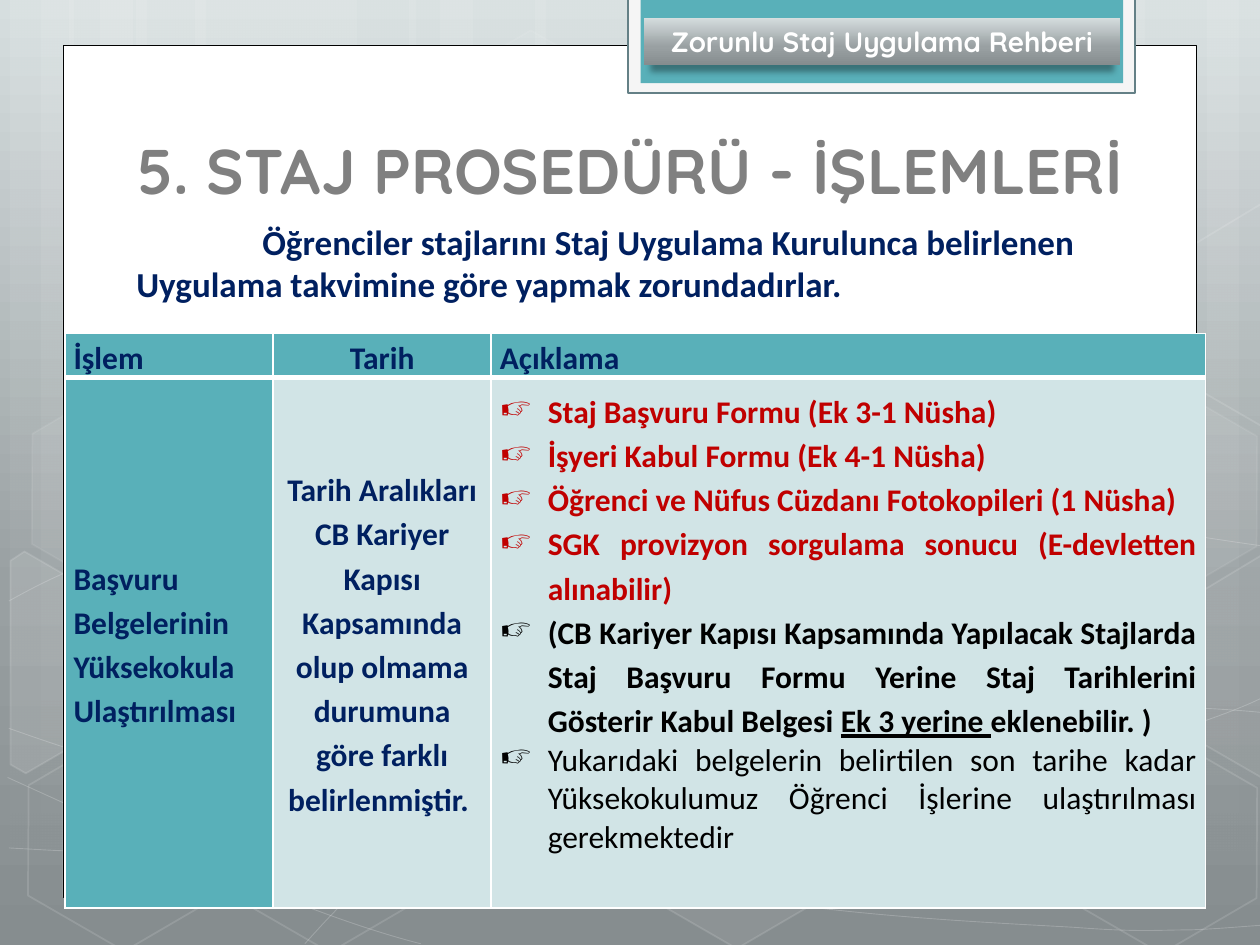
from lxml.etree import SubElement
from pptx import Presentation
from pptx.dml.color import RGBColor
from pptx.enum.shapes import MSO_SHAPE
from pptx.enum.text import MSO_ANCHOR, MSO_AUTO_SIZE, PP_ALIGN
from pptx.oxml.ns import qn
from pptx.util import Inches, Pt

RECTANGLE, HEXAGON = MSO_SHAPE.RECTANGLE, MSO_SHAPE.HEXAGON
LEFT, CENTER, JUSTIFY = PP_ALIGN.LEFT, PP_ALIGN.CENTER, PP_ALIGN.JUSTIFY
TOP, MIDDLE = MSO_ANCHOR.TOP, MSO_ANCHOR.MIDDLE
COLUMNS, ROWS = 100, 75
COLORS = {"white": "FFFFFF", "black": "000000", "gray": "808080", "navy": "002060",
          "red": "C00000", "teal": "59B0B9", "pale": "D1E4E6", "tab": "F5F5F5", "slate": "648086"}
SILVER = [(0, "D6DEDF", 100), (62, "99A0A2", 100), (100, "868D8F", 100)]
FADE = [(0, "FFFFFF", 10), (100, "FFFFFF", 0)]
NAVY = {"name": "Calibri", "size": Pt(18), "bold": True, "color": "navy"}
RED, BLACK = NAVY | {"color": "red"}, NAVY | {"color": "black"}
HEADING = {"name": "Quicksand", "size": Pt(36), "bold": True, "color": "gray"}

STRIPES = [(start + offset, width)
           for start, wide in ((0.8, 17.5), (5.5, 17.5), (32.5, 30.8))
           for offset, width in ((10, wide), (0, 5), (2.5, 8.3))]
STRIPES += [(73.3, 17.5), (95.8, 5), (90, 8.3)]
CURVES = [
    [(0.7, 67.3), (6.1, 67.6), (11.5, 67.9), (19, 67.8), (26.5, 67.7), (35.8, 67.5), (45.8, 66.5),
     (55.8, 65.5), (70, 63.6), (79.2, 61.7), (88.3, 59.8), (97.7, 56.8), (100.7, 55.1)],
    [(0.7, 47.7), (3.6, 46.1), (6.5, 44.6), (12.1, 43.1), (17.8, 41.6), (25.9, 39.4), (34.7, 38.7),
     (43.6, 38), (54.4, 37.9), (65.4, 38.7), (76.4, 39.5), (94.7, 42.6), (100.7, 43.4)],
    [(0.6, 61.7), (12.7, 67.2), (24.7, 72.7), (33.4, 74.9)],
    [(0.7, 57.8), (3.8, 58.9), (7, 60), (12.8, 61.6), (18.6, 63.1), (27.3, 65.6), (35.7, 67.3),
     (44, 69), (54.5, 70.8), (62.8, 71.8), (71.1, 72.9), (80, 73.3), (85.3, 73.6),
     (90.5, 74), (91.9, 73.8), (94.5, 73.8), (97.1, 73.7), (98.9, 73.5), (100.7, 73.4)],
    [(24.2, 74.9), (26, 72.9), (27.8, 70.9), (30.2, 69.1), (32.6, 67.3), (36, 65.3), (38.8, 63.9),
     (41.6, 62.5), (43.3, 61.9), (47, 60.9), (50.6, 59.9), (57.3, 58.5), (60.8, 57.8),
     (64.4, 57.1), (64.9, 57.1), (68, 56.9), (71.1, 56.6), (76, 56.3), (79.4, 56.2),
     (82.9, 56.1), (88.6, 56.2), (95.3, 56.2), (97.1, 56.3), (98.8, 56.4), (100.6, 56.6)],
]
HEXAGONS = [(33.4, 3.6, 4, 8), (49.7, 58.9, 6, 12), (1.1, 59.1, 0, 12), (1.4, 31.2, 7, 8),
            (17.4, 59.2, 0, 12), (75.3, 45.3, 10, 12), (83.4, 59.3, 0, 12), (83.4, 31.4, 7, 8)]
LEFT_EDGE = [(-3.3, 47.1), (-2.7, 45.9), (6.1, 45.9), (10.5, 53.6), (6.2, 61.1), (4.8, 61.1)]
RIGHT_EDGE = [(91.7, 52), (95.9, 44.4), (96.9, 44.4), (105.3, 58.9), (104.8, 59.6), (96, 59.6)]
CUT_HEXAGONS = [(LEFT_EDGE, 10), (RIGHT_EDGE, 4),
                ([(column, row - 27.9) for column, row in RIGHT_EDGE], 0)]
HEADER = [("İşlem", JUSTIFY, TOP), ("Tarih", CENTER, MIDDLE), ("Açıklama", JUSTIFY, TOP)]
PROCESS = "Başvuru Belgelerinin Yüksekokula Ulaştırılması"
DATES = ("Tarih Aralıkları CB Kariyer Kapısı Kapsamında olup olmama durumuna "
         "göre farklı belirlenmiştir. ")
FORMS = ["Staj Başvuru Formu (Ek 3-1 Nüsha)", "İşyeri Kabul Formu (Ek 4-1 Nüsha)",
         "Öğrenci ve Nüfus Cüzdanı Fotokopileri (1 Nüsha)",
         "SGK provizyon sorgulama sonucu (E-devletten alınabilir)"]
CAREER = [("(CB Kariyer Kapısı Kapsamında Yapılacak Stajlarda Staj Başvuru Formu Yerine "
           "Staj Tarihlerini Gösterir Kabul Belgesi ", BLACK),
          ("Ek 3 yerine ", BLACK | {"underline": True}), ("eklenebilir. )", BLACK)]
DELIVERY = ("Yukarıdaki belgelerin belirtilen son tarihe kadar Yüksekokulumuz Öğrenci İşlerine "
            "ulaştırılması gerekmektedir")
INTRO = ("Öğrenciler stajlarını Staj Uygulama Kurulunca belirlenen Uygulama takvimine göre "
         "yapmak zorundadırlar.")


class SlideBuilder:
    """Draws styled elements on one slide, with lengths in grid columns and rows."""

    def __init__(self, deck):
        self.column, self.row = deck.slide_width / COLUMNS, deck.slide_height / ROWS
        self.page = deck.slides.add_slide(deck.slide_layouts[5])
        self.gradient(self.page.background.fill, self.page.element, SILVER)

    def place(self, left, top, width, height):
        return [round(value * unit) for value, unit in
                zip((left, top, width, height), (self.column, self.row) * 2)]

    def color(self, name):
        return RGBColor.from_string(COLORS[name])

    def fade(self, shade, alpha):
        if alpha < 100:
            SubElement(shade, qn("a:alpha"), val=str(alpha * 1000))

    def gradient(self, fill, owner, scale):
        fill.gradient()
        fill.gradient_angle = 270
        stops = next(owner.iter(qn("a:gsLst")))
        stops.clear()
        for position, value, alpha in scale:
            stop = SubElement(stops, qn("a:gs"), pos=str(position * 1000))
            self.fade(SubElement(stop, qn("a:srgbClr"), val=value), alpha)

    def paint(self, shape, fill=None, line=None, width=1, fill_alpha=100, line_alpha=100):
        shape.shadow.inherit = False
        for part, name, alpha, route in ((shape.fill, fill, fill_alpha, "a:solidFill"),
                                         (shape.line.fill, line, line_alpha, "a:ln/a:solidFill")):
            if not name or not alpha:
                part.background()
                continue
            part.solid()
            part.fore_color.rgb = self.color(name)
            steps = [qn(step) for step in (route + "/a:srgbClr").split("/")]
            self.fade(shape.element.spPr.find("/".join(steps)), alpha)
        if line:
            shape.line.width = Pt(width)

    def shape(self, kind, area, **look):
        shape = self.page.shapes.add_shape(kind, *self.place(*area))
        self.paint(shape, **look)
        return shape

    def stripe(self, left, width):
        stripe = self.shape(RECTANGLE, (left, 0, width, ROWS))
        self.gradient(stripe.fill, stripe.element, FADE)

    def hexagon(self, left, top, fill_alpha, line_alpha):
        shape = self.shape(HEXAGON, (left, top, 17.5, 15.2), fill="white", line="white",
                           fill_alpha=fill_alpha, line_alpha=line_alpha)
        shape.adjustments[0], shape.adjustments[1] = 0.285, 1.155
        shape.rotation = 30

    def outline(self, points, close, **look):
        spots = [(column * self.column, row * self.row) for column, row in points]
        builder = self.page.shapes.build_freeform(*spots[0])
        builder.add_line_segments(spots[1:], close=close)
        shape = builder.convert_to_shape()
        self.paint(shape, line="white", **look)
        return shape

    def curve(self, points):
        shape = self.outline(points, False, width=0.5, line_alpha=20)
        route = next(shape.element.iter(qn("a:path")))
        for index, segment in enumerate(route.findall(qn("a:lnTo"))):
            if index % 3 == 0:
                bend = SubElement(route, qn("a:cubicBezTo"))
            bend.append(segment[0])
            route.remove(segment)

    def paragraph(self, para, spans, align=LEFT, indent=None, bullet=None, **spacing):
        para.alignment = align
        for name, value in spacing.items():
            setattr(para, name, value)
        properties = para._p.get_or_add_pPr()
        if indent:
            for name, value in zip(("marL", "indent"), indent):
                properties.set(name, str(Inches(value)))
        if bullet:
            SubElement(properties, qn("a:buChar"), char=bullet)
        for text, style in spans:
            span = para.add_run()
            span.text = text
            for name, value in style.items():
                if name == "color":
                    span.font.color.rgb = self.color(value)
                else:
                    setattr(span.font, name, value)

    def text(self, box, spans, anchor=TOP, **layout):
        frame = box.text_frame
        frame.word_wrap, frame.auto_size = True, MSO_AUTO_SIZE.NONE
        frame.vertical_anchor = anchor
        self.paragraph(frame.paragraphs[0], spans, **layout)

    def title(self, text, area):
        title = self.page.shapes.title
        self.page.shapes.element.append(title.element)
        title.left, title.top, title.width, title.height = self.place(*area)
        self.text(title, [(text, HEADING)], align=CENTER)

    def banner(self, text, area):
        box = self.shape(RECTANGLE, area)
        self.gradient(box.fill, box.element, SILVER)
        effects = box.element.spPr.find(qn("a:effectLst"))
        shadow = SubElement(effects, qn("a:outerShdw"), blurRad=str(Pt(3.5)), dist=str(Pt(4)),
                            dir="5400000", sx="97000", algn="ctr", rotWithShape="0")
        self.fade(SubElement(shadow, qn("a:srgbClr"), val=COLORS["black"]), 34)
        self.text(box, [(text, HEADING | {"size": Pt(16), "color": "white"})], MIDDLE, align=CENTER)

    def table(self, area, widths, heights, rows):
        table = self.page.shapes.add_table(len(rows), len(widths), *self.place(*area)).table
        for column, width in zip(table.columns, widths):
            column.width = round(width * self.column)
        for index, (row, height) in enumerate(zip(table.rows, heights)):
            row.height = round(height * self.row)
            for place, (cell, content) in enumerate(zip(row.cells, rows[index])):
                self.cell(cell, "pale" if index and place else "teal", 1 if index else 3, *content)

    def cell(self, cell, fill, bottom, anchor, margin, paragraphs):
        for side, width in (("L", 1), ("R", 1), ("T", 1), ("B", bottom)):
            border = SubElement(cell._tc.get_or_add_tcPr(), qn("a:ln" + side), w=str(Pt(width)))
            SubElement(SubElement(border, qn("a:solidFill")), qn("a:srgbClr"), val=COLORS["white"])
        cell.fill.solid()
        cell.fill.fore_color.rgb = self.color(fill)
        cell.vertical_anchor = anchor
        cell.margin_left = cell.margin_right = Inches(0.07)
        cell.margin_top = cell.margin_bottom = Inches(margin)
        for index, layout in enumerate(paragraphs):
            frame = cell.text_frame
            self.paragraph(frame.add_paragraph() if index else frame.paragraphs[0], **layout)


def main():
    deck = Presentation()
    deck.slide_width, deck.slide_height = Inches(10), Inches(7.5)
    slide = SlideBuilder(deck)
    for left, width in STRIPES:
        slide.stripe(left, width)
    for points in CURVES:
        slide.curve(points)
    for place in HEXAGONS:
        slide.hexagon(*place)
    for points, alpha in CUT_HEXAGONS:
        slide.outline(points, True, fill="white", fill_alpha=alpha, line_alpha=12).rotation = 30
    slide.shape(RECTANGLE, (5, 3.6, 90, 67.6), fill="white", line="black", width=0.5)
    slide.shape(RECTANGLE, (49.86, -0.2, 40.2, 7.6), fill="tab", line="slate", width=1.25)
    slide.shape(RECTANGLE, (50.84, -0.2, 38.3, 6.8), fill="teal")
    slide.banner("Zorunlu Staj Uygulama Rehberi", (51.1, 1.4, 37.8, 3.74))
    slide.title("5. STAJ PROSEDÜRÜ - İŞLEMLERİ", (9.84, 9.9, 80.3, 7.1))
    intro = slide.page.shapes.add_textbox(*slide.place(9.84, 17, 78.7, 7.7))
    slide.text(intro, [(INTRO, NAVY | {"size": Pt(20)})], indent=(0, 1))

    header = [(anchor, 0, [{"spans": [(text, NAVY)], "align": align, "line_spacing": 1.15,
                            "space_after": Pt(10)}]) for text, align, anchor in HEADER]
    item = {"align": JUSTIFY, "indent": (0.38, -0.38), "bullet": "☞"}
    notes = [item | {"spans": spans, "line_spacing": 1.15}
             for spans in [[(form, RED)] for form in FORMS] + [CAREER]]
    notes.append(item | {"spans": [(DELIVERY, BLACK | {"bold": False})]})
    body = [(MIDDLE, 0, [{"spans": [(text, NAVY)], "align": align, "line_spacing": 1.15}])
            for text, align in ((PROCESS, LEFT), (DATES, CENTER))]
    slide.table((5.14, 26.45, 90.6, 45.5), (16.54, 17.3, 56.7), (3.3, 42.1),
                [header, body + [(TOP, 0.08, notes)]])
    deck.save("out.pptx")


if __name__ == "__main__":
    main()
